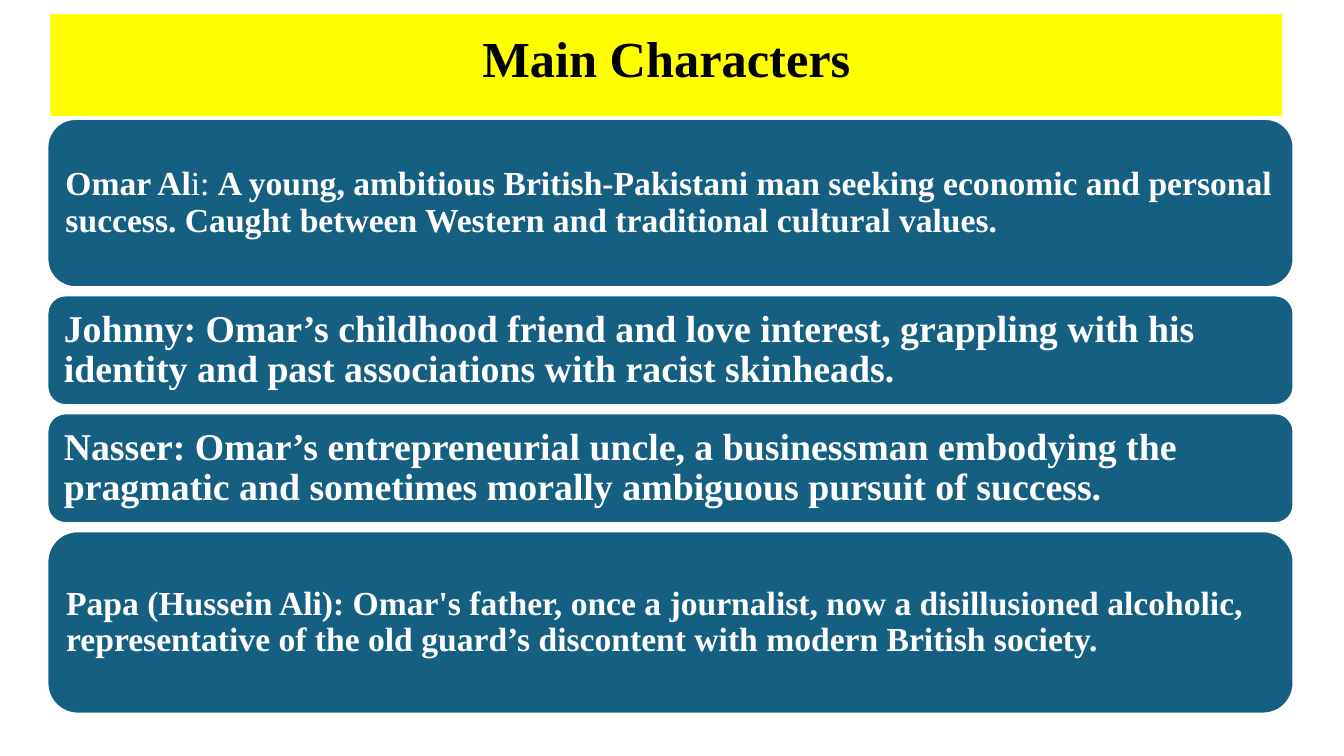
"""Build the Main Characters slide: a title banner above a stack of character cards."""
from dataclasses import dataclass

from pptx import Presentation
from pptx.dml.color import RGBColor
from pptx.enum.shapes import MSO_SHAPE
from pptx.enum.text import MSO_ANCHOR, PP_ALIGN
from pptx.shapes.autoshape import Shape
from pptx.slide import Slide
from pptx.util import Inches, Pt

RECTANGLE = MSO_SHAPE.RECTANGLE
ROUNDED_RECTANGLE = MSO_SHAPE.ROUNDED_RECTANGLE
MIDDLE = MSO_ANCHOR.MIDDLE
LEFT = PP_ALIGN.LEFT
CENTER = PP_ALIGN.CENTER

YELLOW = RGBColor(0xFF, 0xFF, 0x00)
TEAL = RGBColor(0x15, 0x60, 0x82)
WHITE = RGBColor(0xFF, 0xFF, 0xFF)
BLACK = RGBColor(0x00, 0x00, 0x00)
FONT_NAME = "Times New Roman"

CARD_LEFT = 0.47
CARD_WIDTH = 12.36
CARDS_TOP = 1.18
CARD_GAP = 0.08


@dataclass(frozen=True)
class Run:
    text: str
    bold: bool = True


@dataclass(frozen=True)
class Card:
    height: float
    font_size: float
    inset: float
    runs: tuple[Run, ...]


CARDS = (
    Card(1.67, 24, 0.1, (
        Run("Omar Al"),
        Run("i: ", bold=False),
        Run("A young, ambitious British-Pakistani man seeking economic and personal "
            "success. Caught between Western and traditional cultural values."),
    )),
    Card(1.09, 27, 0.11, (
        Run("Johnny: Omar’s childhood friend and love interest, grappling with his "
            "identity and past associations with racist skinheads."),
    )),
    Card(1.09, 27, 0.11, (
        Run("Nasser: Omar’s entrepreneurial uncle, a businessman embodying the "
            "pragmatic and sometimes morally ambiguous pursuit of success."),
    )),
    Card(1.81, 24, 0.1, (
        Run("Papa (Hussein Ali): Omar's father, once a journalist, now a disillusioned "
            "alcoholic, representative of the old guard’s discontent with modern "
            "British society."),
    )),
)


def set_attributes(target: object, values: dict[str, object]) -> None:
    for name, value in values.items():
        setattr(target, name, value)


def add_block(slide: Slide, kind: MSO_SHAPE, left: float, top: float,
              width: float, height: float, fill: RGBColor) -> Shape:
    shape = slide.shapes.add_shape(
        kind, Inches(left), Inches(top), Inches(width), Inches(height))
    shape.shadow.inherit = False
    shape.fill.solid()
    shape.fill.fore_color.rgb = fill
    return shape


def write_text(shape: Shape, runs: tuple[Run, ...], size: float, color: RGBColor,
               alignment: PP_ALIGN, margins: dict[str, float]) -> None:
    frame = shape.text_frame
    set_attributes(frame, {"word_wrap": True, "vertical_anchor": MIDDLE})
    set_attributes(frame, {f"margin_{side}": Inches(margin)
                           for side, margin in margins.items()})
    paragraph = frame.paragraphs[0]
    set_attributes(paragraph, {"alignment": alignment, "line_spacing": 0.9})
    for item in runs:
        run = paragraph.add_run()
        run.text = item.text
        set_attributes(run.font, {"name": FONT_NAME, "size": Pt(size), "bold": item.bold})
        run.font.color.rgb = color


def add_title(slide: Slide) -> None:
    banner = add_block(slide, RECTANGLE, 0.5, 0.14, 12.22, 1.01, YELLOW)
    banner.line.fill.background()
    write_text(banner, (Run("Main Characters"),), 36, BLACK, CENTER,
               {"left": 0.1, "right": 0.1, "top": 0.05, "bottom": 0.13})


def add_card(slide: Slide, card: Card, top: float) -> None:
    shape = add_block(slide, ROUNDED_RECTANGLE, CARD_LEFT, top,
                      CARD_WIDTH, card.height, TEAL)
    shape.line.color.rgb = WHITE
    shape.line.width = Pt(1.5)
    margins = dict.fromkeys(("left", "right", "top", "bottom"), card.inset)
    write_text(shape, card.runs, card.font_size, WHITE, LEFT, margins)


def main() -> None:
    presentation = Presentation()
    presentation.slide_width = Inches(13.33)
    presentation.slide_height = Inches(7.5)
    slide = presentation.slides.add_slide(presentation.slide_layouts[6])
    add_title(slide)
    top = CARDS_TOP
    for card in CARDS:
        add_card(slide, card, top)
        top += card.height + CARD_GAP
    presentation.save("out.pptx")


if __name__ == "__main__":
    main()
